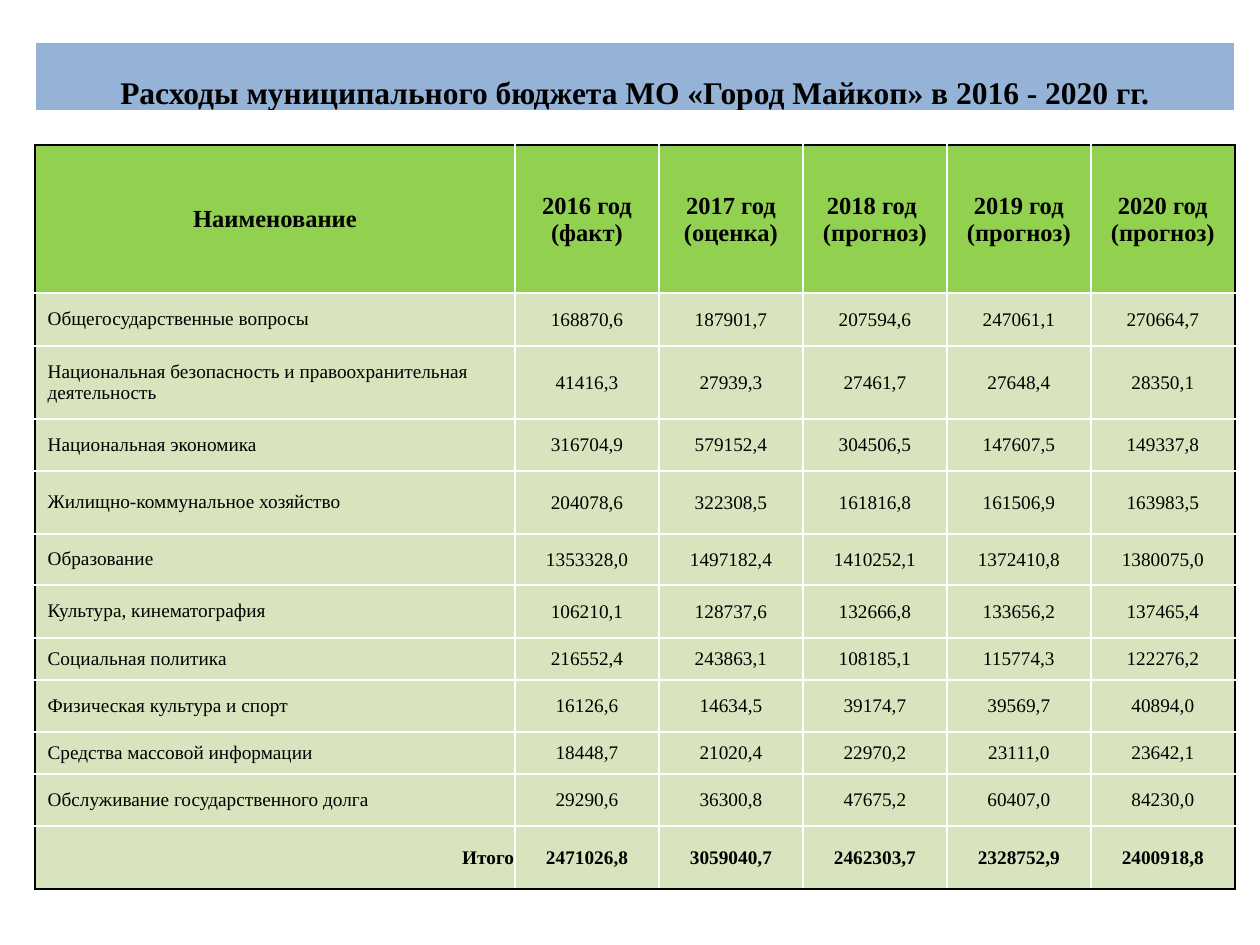
from lxml.etree import SubElement
from pptx import Presentation
from pptx.dml.color import RGBColor
from pptx.enum.text import MSO_ANCHOR, PP_ALIGN
from pptx.oxml.ns import qn
from pptx.util import Pt

PX = 914400 / 126
BLACK, WHITE = "000000", "FFFFFF"
LEFT, WIDTH = 35, 1200


def add_grid(slide, top, cols, rows):
    """Add a table with plain cells from column widths and row heights in px."""
    frame = slide.shapes.add_table(
        len(rows), len(cols), round(LEFT * PX), round(top * PX),
        round(sum(cols) * PX), round(sum(rows) * PX))
    table = frame.table
    table.first_row = table.horz_banding = False
    for col, size in zip(table.columns, cols):
        col.width = round(size * PX)
    for row, size in zip(table.rows, rows):
        row.height = round(size * PX)
    return table


def fill_cell(cell, text, size, bold, align, fill, edges, tight=True):
    """Format one cell; edges are the left, right, top and bottom colours."""
    props = cell._tc.get_or_add_tcPr()
    for side, color in zip("LRTB", edges):
        line = SubElement(props, qn(f"a:ln{side}"), w=str(Pt(1)))
        solid = SubElement(line, qn("a:solidFill"))
        SubElement(solid, qn("a:srgbClr"), val=color)
    cell.fill.solid()
    cell.fill.fore_color.rgb = RGBColor.from_string(fill)
    cell.vertical_anchor = MSO_ANCHOR.MIDDLE
    if tight:
        cell.margin_left = cell.margin_right = cell.margin_top = round(PX)
        cell.margin_bottom = 0
    cell.text_frame.text = text
    for para in cell.text_frame.paragraphs:
        para.alignment = align
        for run in para.runs:
            run.font.name = "Times New Roman"
            run.font.size = Pt(size)
            run.font.bold = bold
            run.font.color.rgb = RGBColor.from_string(BLACK)


prs = Presentation()
prs.slide_width, prs.slide_height = round(1260 * PX), round(945 * PX)
slide = prs.slides.add_slide(prs.slide_layouts[6])

# Title band
title = add_grid(slide, 42, [WIDTH], [69]).cell(0, 0)
fill_cell(title, "Расходы муниципального бюджета МО «Город Майкоп» в 2016 - 2020 гг.",
          18, True, PP_ALIGN.CENTER, "95B3D7", [WHITE] * 4)
title.vertical_anchor = MSO_ANCHOR.BOTTOM

# Spending by year: row height in px, then the cells
data = [
    (148, "Наименование", "2016 год\n(факт)", "2017 год\n(оценка)",
     "2018 год \n(прогноз)", "2019 год (прогноз)", "2020 год\n(прогноз)"),
    (53, "Общегосударственные вопросы",
     "168870,6", "187901,7", "207594,6", "247061,1", "270664,7"),
    (73, "Национальная безопасность и правоохранительная деятельность",
     "41416,3", "27939,3", "27461,7", "27648,4", "28350,1"),
    (52, "Национальная экономика",
     "316704,9", "579152,4", "304506,5", "147607,5", "149337,8"),
    (63, "Жилищно-коммунальное хозяйство",
     "204078,6", "322308,5", "161816,8", "161506,9", "163983,5"),
    (51, "Образование",
     "1353328,0", "1497182,4", "1410252,1", "1372410,8", "1380075,0"),
    (53, "Культура, кинематография",
     "106210,1", "128737,6", "132666,8", "133656,2", "137465,4"),
    (42, "Социальная политика",
     "216552,4", "243863,1", "108185,1", "115774,3", "122276,2"),
    (52, "Физическая культура и спорт",
     "16126,6", "14634,5", "39174,7", "39569,7", "40894,0"),
    (42, "Средства массовой информации",
     "18448,7", "21020,4", "22970,2", "23111,0", "23642,1"),
    (52, "Обслуживание государственного долга",
     "29290,6", "36300,8", "47675,2", "60407,0", "84230,0"),
    (63, "Итого",
     "2471026,8", "3059040,7", "2462303,7", "2328752,9", "2400918,8"),
]
cols = [480] + [144] * 5
table = add_grid(slide, 145, cols, [row[0] for row in data])
last_row, last_col = len(data) - 1, len(cols) - 1

for r, (_, *texts) in enumerate(data):
    head, total = r == 0, r == last_row
    for c, text in enumerate(texts):
        label = c == 0 and not head and not total
        if label:
            align = PP_ALIGN.LEFT
        elif c == 0 and total:
            align = PP_ALIGN.RIGHT
        else:
            align = PP_ALIGN.CENTER
        outer = (c == 0, c == last_col, head, total)
        edges = [BLACK if rim else WHITE for rim in outer]
        fill_cell(table.cell(r, c), text, 14 if head else 11, head or total,
                  align, "92D050" if head else "D7E4BD", edges, not label)

prs.save("out.pptx")
